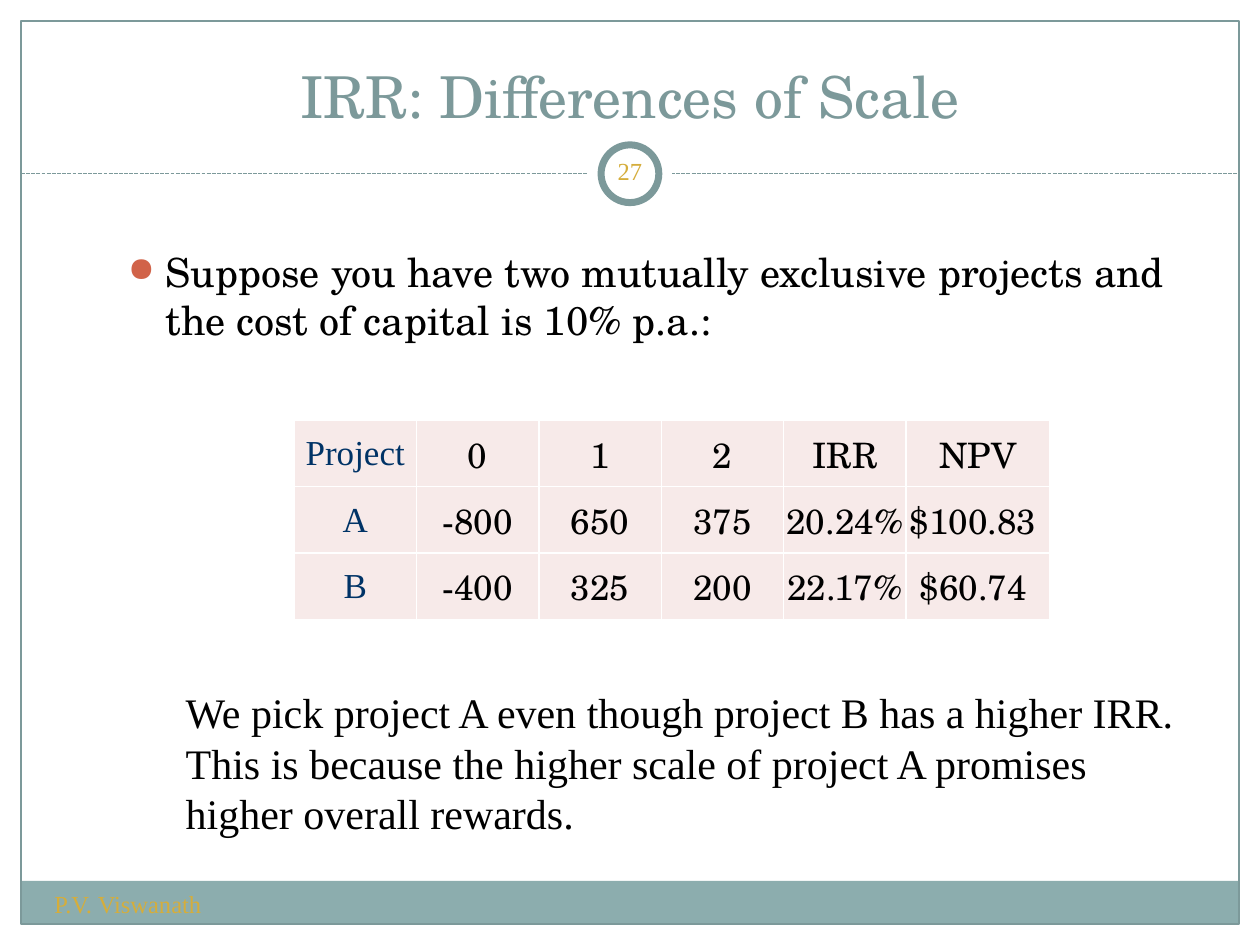
from lxml import etree
from pptx import Presentation, util as u
from pptx.dml.color import RGBColor
from pptx.enum import dml, shapes, text
from pptx.oxml import parse_xml
from pptx.oxml.ns import nsdecls, qn

THEME = {
    "white": "FFFFFF", "teal": "7C999A", "band": "8CADAE", "gold": "D5AD3B",
    "black": "000000", "navy": "003366", "cell": "F7EAE9", "bullet": "D16349",
    "serif": "Times New Roman", "school": "TeX Gyre Schola",
    "title": 33, "body": 22.9, "note": 24, "table": 20, "small": 14,
}
CENTER, LEFT = text.PP_ALIGN.CENTER, text.PP_ALIGN.LEFT
TOP, MIDDLE, BOTTOM = text.MSO_ANCHOR.TOP, text.MSO_ANCHOR.MIDDLE, text.MSO_ANCHOR.BOTTOM

deck = Presentation()
deck.slide_width, deck.slide_height = u.Inches(10), u.Inches(7.5)
page = deck.slides.add_slide(deck.slide_layouts[6])
UNIT = deck.slide_width / 120  # the grid has 120 columns and 90 rows


def grid(*steps):
    return [round(step * UNIT) for step in steps]


def write(frame, lines, size, font, color, align=LEFT, anchor=TOP):
    frame.word_wrap, frame.vertical_anchor = True, anchor
    for number, line in enumerate(lines):
        para = frame.add_paragraph() if number else frame.paragraphs[0]
        para.alignment = align
        span = para.add_run()
        span.text = line
        span.font.color.rgb = RGBColor.from_string(THEME[color])
        for name, value in {"size": u.Pt(THEME[size]), "name": THEME[font]}.items():
            setattr(span.font, name, value)


# Frame, footer band and the ring on the dashed rule
RECT, OVAL = shapes.MSO_SHAPE.RECTANGLE, shapes.MSO_SHAPE.OVAL
rule = page.shapes.add_connector(
    shapes.MSO_CONNECTOR.STRAIGHT, *grid(2, 16.5, 118, 16.5))
rule.line.color.rgb = RGBColor.from_string(THEME["teal"])
rule.line.width, rule.line.dash_style = u.Pt(0.75), dml.MSO_LINE.SQUARE_DOT
etree.SubElement(rule._element.spPr, qn("a:effectLst"))

for kind, place, fill, weight in (
    (RECT, (2, 83.9, 116, 4.1), "band", 0),
    (RECT, (2, 2, 116, 86), None, 0.75),
    (OVAL, (56, 12.6, 8, 8), "white", 0),
    (OVAL, (57.25, 13.8, 5.5, 5.5), "white", 4),
):
    box = page.shapes.add_shape(kind, *grid(*place))
    box.shadow.inherit = False
    if fill:
        box.fill.solid()
        box.fill.fore_color.rgb = RGBColor.from_string(THEME[fill])
    else:
        box.fill.background()
    if weight:
        box.line.color.rgb = RGBColor.from_string(THEME["teal"])
        box.line.width = u.Pt(weight)
    else:
        box.line.fill.background()

# Texts
frames = {}
for name, place, lines, *style in (
    ("title", (4, 3, 112, 10), ["IRR: Differences of Scale"],
     "title", "school", "teal", CENTER, BOTTOM),
    ("body", (11, 23, 104.4, 9),
     ["Suppose you have two mutually exclusive projects and "
      "the cost of capital is 10% p.a.:"], "body", "school", "black"),
    ("author", (4, 84.1, 47, 4.8), ["P.V. Viswanath"], "small", "serif", "gold"),
    ("number", (57, 13.4, 6, 5.8), ["27"], "small", "serif", "gold", CENTER, MIDDLE),
    ("note", (16.5, 64.8, 99, 15.7),
     ["We pick project A even though project B has a higher IRR.",
      "This is because the higher scale of project A promises higher overall rewards."],
     "note", "serif", "black"),
):
    frames[name] = page.shapes.add_textbox(*grid(*place)).text_frame
    write(frames[name], lines, *style)

for side in ("left", "right", "top", "bottom"):
    setattr(frames["number"], f"margin_{side}", u.Inches(0.05))

bullet = frames["body"].paragraphs[0]._p.get_or_add_pPr()
for name, value in {"marL": 0.3, "indent": -0.3}.items():
    bullet.set(name, str(u.Inches(value)))
for markup in (
    f'<a:buClr {nsdecls("a")}><a:srgbClr val="{THEME["bullet"]}"/></a:buClr>',
    f'<a:buSzPct {nsdecls("a")} val="85000"/>',
    f'<a:buChar {nsdecls("a")} char="●"/>',
):
    bullet.append(parse_xml(markup))

# Cash flows of the two projects
ROWS = (
    ("Project", "0", "1", "2", "IRR", "NPV"),
    ("A", "-800", "650", "375", "20.24%", "$100.83 "),
    ("B", "-400", "325", "200", "22.17%", "$60.74 "),
)
WIDTHS = [11.66] * 5 + [13.7]
table = page.shapes.add_table(len(ROWS), len(WIDTHS), *grid(28, 40, 72, 19)).table
table.first_row = table.horz_banding = False
for column, width in zip(table.columns, grid(*WIDTHS)):
    column.width = width
for r, row in enumerate(ROWS):
    for c, value in enumerate(row):
        cell = table.cell(r, c)
        cell.fill.solid()
        cell.fill.fore_color.rgb = RGBColor.from_string(THEME["cell"])
        for side, inches in {"left": 0.01, "right": 0.01, "top": 0.01, "bottom": 0}.items():
            setattr(cell, f"margin_{side}", u.Inches(inches))
        font, color = ("school", "black") if c else ("serif", "navy")
        write(cell.text_frame, [value], "table", font, color, CENTER)
        cell.vertical_anchor = MIDDLE
        for position, edge in enumerate(("lnL", "lnR", "lnT", "lnB")):
            cell._tc.tcPr.insert(position, parse_xml(
                f'<a:{edge} {nsdecls("a")} w="{u.Pt(1)}"><a:solidFill>'
                f'<a:srgbClr val="{THEME["white"]}"/></a:solidFill></a:{edge}>'))

deck.save("out.pptx")
